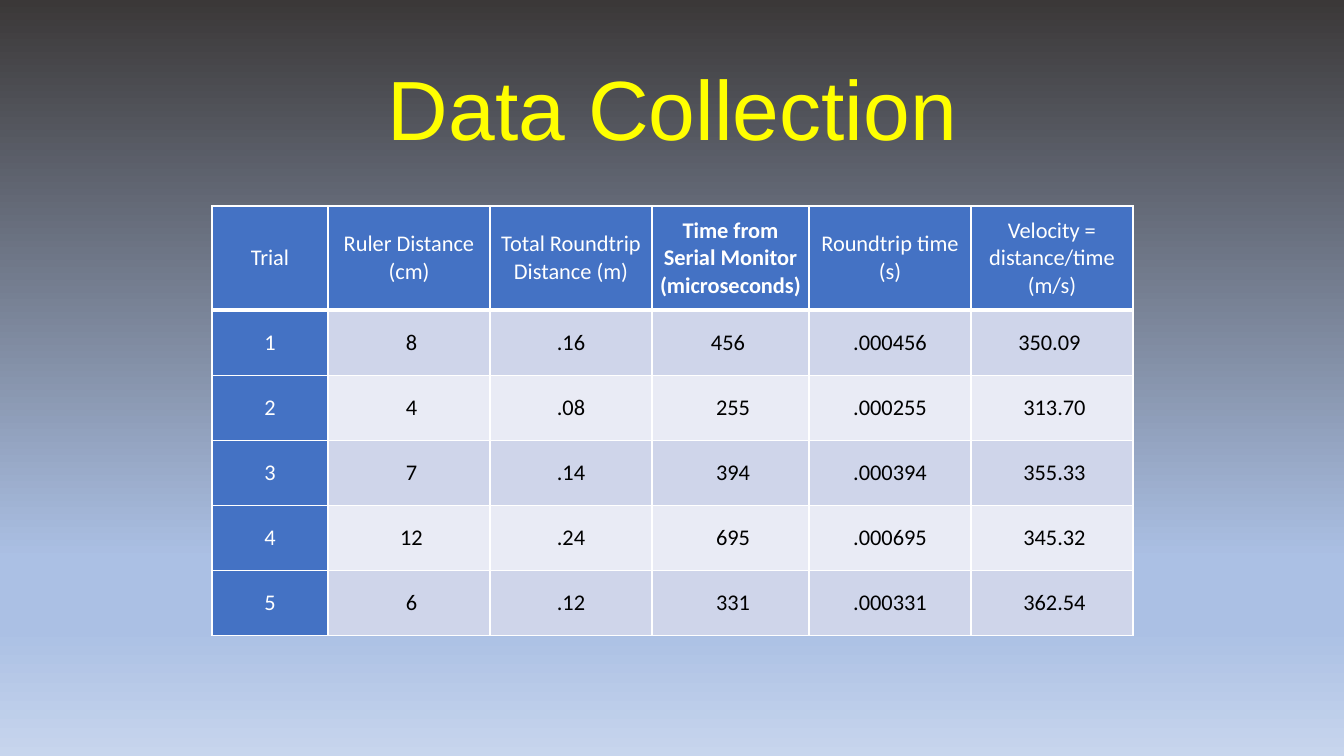
"""Build the Data Collection slide: a title over a table of trial measurements."""
from copy import deepcopy

from lxml import etree
from pptx import Presentation
from pptx.dml.color import RGBColor
from pptx.enum.text import MSO_ANCHOR, PP_ALIGN
from pptx.oxml.ns import qn
from pptx.util import Pt

TITLE = "Data Collection"
HEADINGS = [
    "Trial",
    "Ruler Distance (cm)",
    "Total Roundtrip Distance (m)",
    "Time from Serial Monitor (microseconds)",
    "Roundtrip time (s)",
    "Velocity = distance/time (m/s)",
]
TRIALS = [
    ["1", " 8", ".16", "456 ", ".000456", "350.09 "],
    ["2", " 4", ".08", " 255", ".000255", " 313.70"],
    ["3", " 7", ".14", " 394", ".000394", " 355.33"],
    ["4", " 12", ".24", " 695", ".000695", " 345.32"],
    ["5", " 6", ".12", " 331", ".000331", " 362.54"],
]
BOLD_COLUMN = 3

WHITE = RGBColor(0xFF, 0xFF, 0xFF)
BLACK = RGBColor(0x00, 0x00, 0x00)
YELLOW = RGBColor(0xFF, 0xFF, 0x00)
BLUE = RGBColor(0x44, 0x72, 0xC4)
BANDS = [RGBColor(0xCF, 0xD5, 0xEA), RGBColor(0xE9, 0xEB, 0xF5)]
SKY = RGBColor(0xAB, 0xC0, 0xE4)
BACKDROP = [
    (0, RGBColor(0x3B, 0x38, 0x38)),
    (0.74, SKY),
    (0.83, SKY),
    (1, RGBColor(0xC7, 0xD5, 0xED)),
]
CENTER = PP_ALIGN.CENTER
MIDDLE = MSO_ANCHOR.MIDDLE

SLIDE_SIZE = (1344, 756)
TITLE_BOX = (93, 40, 1159, 146)
TABLE_LEFT, TABLE_TOP, TABLE_HEIGHT = 212, 206, 430
COLUMN_WIDTHS = [116, 162, 162, 157, 162, 162]
HEADING_HEIGHT = 104
TRIAL_HEIGHT = (TABLE_HEIGHT - HEADING_HEIGHT) / len(TRIALS)
CELL_INSET = 7


def px(length):
    return round(length * 914400 / 100.8)


def paint_backdrop(slide):
    fill = slide.background.fill
    fill.gradient()
    fill.gradient_angle = 270
    stop_list = slide.element.find(".//" + qn("a:gsLst"))
    for _ in BACKDROP[2:]:
        stop_list.append(deepcopy(stop_list[0]))
    for stop, (position, color) in zip(fill.gradient_stops, BACKDROP):
        stop.position = position
        stop.color.rgb = color


def style_text(frame, font_name, size, color, bold=False):
    paragraph = frame.paragraphs[0]
    paragraph.alignment = CENTER
    font = paragraph.runs[0].font
    font.name, font.size, font.bold = font_name, Pt(size), bold
    font.color.rgb = color


def add_title(slide):
    frame = slide.shapes.add_textbox(*map(px, TITLE_BOX)).text_frame
    frame.word_wrap = True
    frame.vertical_anchor = MIDDLE
    frame.text = TITLE
    frame.paragraphs[0].line_spacing = 0.9
    style_text(frame, "Arial", 60, YELLOW)


def add_borders(cell, bottom_width):
    properties = cell._tc.get_or_add_tcPr()
    widths = {"a:lnL": 1, "a:lnR": 1, "a:lnT": 1, "a:lnB": bottom_width}
    for index, (side, width) in enumerate(widths.items()):
        line = etree.Element(qn(side), w=str(Pt(width)))
        solid = etree.SubElement(line, qn("a:solidFill"))
        etree.SubElement(solid, qn("a:srgbClr"), val=str(WHITE))
        properties.insert(index, line)


def fill_cell(cell, text, row, column):
    is_heading = row == 0
    on_blue = is_heading or column == 0
    cell.margin_left = cell.margin_right = px(CELL_INSET)
    cell.margin_top = cell.margin_bottom = 0
    cell.vertical_anchor = MIDDLE
    cell.fill.solid()
    cell.fill.fore_color.rgb = BLUE if on_blue else BANDS[(row - 1) % 2]
    cell.text_frame.text = text
    style_text(cell.text_frame, "Calibri", 16, WHITE if on_blue else BLACK,
               is_heading and column == BOLD_COLUMN)
    add_borders(cell, 3 if is_heading else 1)


def add_trials(slide):
    rows = [HEADINGS] + TRIALS
    box = (TABLE_LEFT, TABLE_TOP, sum(COLUMN_WIDTHS), TABLE_HEIGHT)
    table = slide.shapes.add_table(len(rows), len(HEADINGS), *map(px, box)).table
    table.first_col = True
    for column, width in zip(table.columns, COLUMN_WIDTHS):
        column.width = px(width)
    for row, texts in enumerate(rows):
        table.rows[row].height = px(TRIAL_HEIGHT if row else HEADING_HEIGHT)
        for column, text in enumerate(texts):
            fill_cell(table.cell(row, column), text, row, column)


def main():
    deck = Presentation()
    deck.slide_width, deck.slide_height = map(px, SLIDE_SIZE)
    slide = deck.slides.add_slide(deck.slide_layouts[6])
    paint_backdrop(slide)
    add_title(slide)
    add_trials(slide)
    deck.save("out.pptx")


if __name__ == "__main__":
    main()
